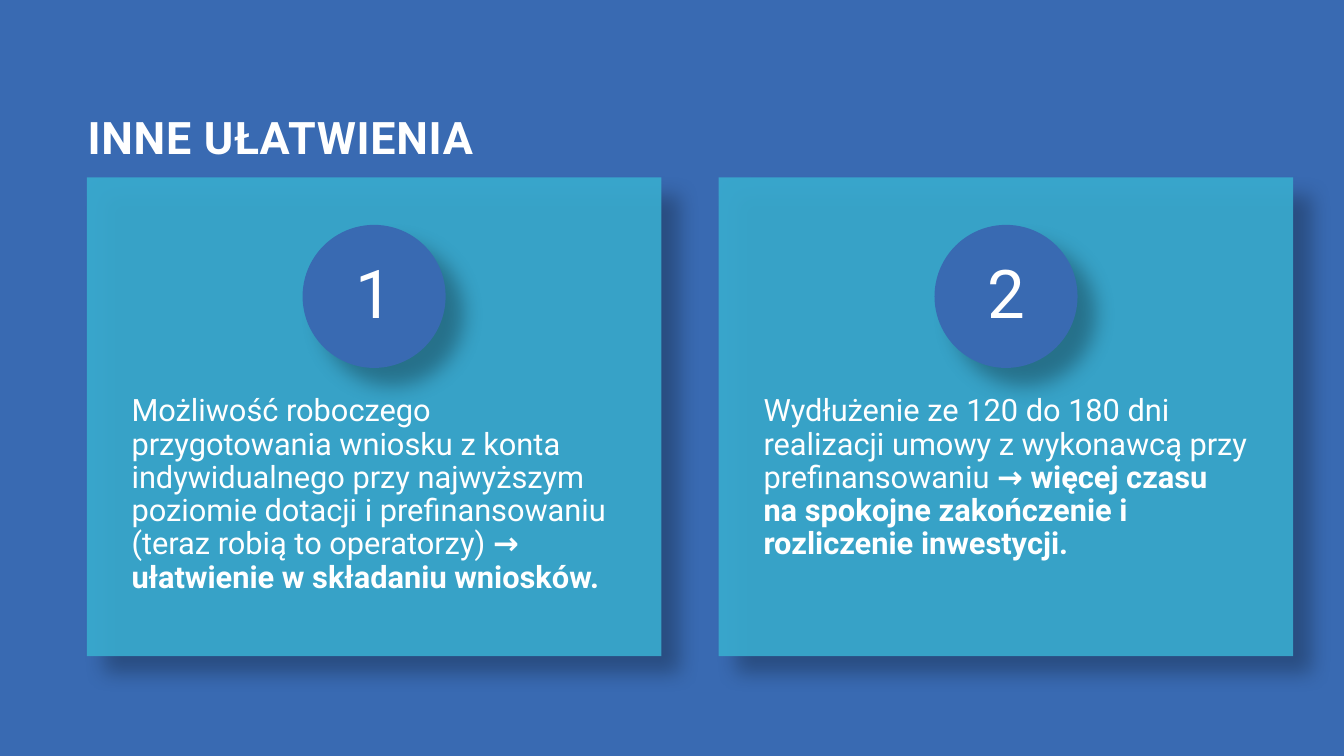
import pptx
import pptx.util
import pptx.dml.color
import pptx.enum.shapes
import pptx.enum.text
import pptx.oxml
import pptx.oxml.ns

Pt = pptx.util.Pt
RGB = pptx.dml.color.RGBColor.from_string
SHAPE = pptx.enum.shapes.MSO_SHAPE
ANCHOR = pptx.enum.text.MSO_ANCHOR
ALIGN = pptx.enum.text.PP_ALIGN
qn = pptx.oxml.ns.qn

COLORS = {"blue": "396AB2", "teal": "39ACCF", "white": "FFFFFF", "shadow": "000000"}
CARDS = [
    ("1", "Możliwość roboczego przygotowania wniosku z konta indywidualnego przy "
          "najwyższym poziomie dotacji i prefinansowaniu (teraz robią to operatorzy) ",
     "→ ułatwienie w składaniu wniosków."),
    ("2", "Wydłużenie ze 120 do 180 dni realizacji umowy z wykonawcą przy "
          "prefinansowaniu ",
     "→ więcej czasu na spokojne zakończenie i rozliczenie inwestycji."),
]
CARD_LEFT, CARD_TOP, CARD_W, CARD_H = 62, 126.7, 410.4, 342
CARD_STEP = 451.4
CIRCLE_TOP, CIRCLE = 160.6, 102.2
TEXT_TOP, TEXT_H = 256.3, 205.2


def add_shadowed(kind, left, top, width, height, color):
    sp = slide.shapes.add_shape(kind, Pt(left), Pt(top), Pt(width), Pt(height))
    sp.fill.solid()
    sp.fill.fore_color.rgb = RGB(COLORS[color])
    sp.line.fill.background()
    sp.shadow.inherit = False
    effects = sp._element.spPr.find(qn("a:effectLst"))
    effects.append(pptx.oxml.parse_xml(
        f'<a:outerShdw {pptx.oxml.ns.nsdecls("a")} blurRad="{Pt(15)}" dist="{Pt(18)}" '
        f'dir="2700000" algn="tl" rotWithShape="0"><a:srgbClr val="{COLORS["shadow"]}">'
        '<a:alpha val="30000"/></a:srgbClr></a:outerShdw>'))
    return sp


def style(p, size):
    p.line_spacing = 0.9
    p.font.name = "Roboto"
    p.font.size = Pt(size)
    p.font.color.rgb = RGB(COLORS["white"])


prs = pptx.Presentation()
prs.slide_width, prs.slide_height = Pt(960), Pt(540)
slide = prs.slides.add_slide(prs.slide_layouts[5])
slide.background.fill.solid()
slide.background.fill.fore_color.rgb = RGB(COLORS["blue"])

# Title
title = slide.shapes.title
title.left, title.top, title.width, title.height = Pt(55.4), Pt(79.2), Pt(339.8), Pt(63.4)
tf = title.text_frame
tf.text = "INNE UŁATWIENIA"
tf.auto_size = pptx.enum.text.MSO_AUTO_SIZE.NONE
tf.vertical_anchor = ANCHOR.TOP
p = tf.paragraphs[0]
p.alignment = ALIGN.LEFT
style(p, 32)
p.font.bold = True
p.runs[0].font._element.set("spc", "50")

for i, (number, text, benefit) in enumerate(CARDS):
    left = CARD_LEFT + i * CARD_STEP

    # Card panel, slightly transparent
    card = add_shadowed(SHAPE.RECTANGLE, left, CARD_TOP, CARD_W, CARD_H, "teal")
    color = card._element.spPr.find(qn("a:solidFill"))[0]
    color.append(pptx.oxml.parse_xml(
        f'<a:alpha {pptx.oxml.ns.nsdecls("a")} val="90000"/>'))

    # Description with the benefit in bold
    box = slide.shapes.add_textbox(Pt(left), Pt(TEXT_TOP), Pt(CARD_W), Pt(TEXT_H))
    tf = box.text_frame
    tf.word_wrap = True
    tf.margin_left = tf.margin_right = Pt(32)
    tf.margin_top = tf.margin_bottom = Pt(26)
    p = tf.paragraphs[0]
    p.add_run().text = text
    r = p.add_run()
    r.text = benefit
    r.font.bold = True
    style(p, 22)

    # Numbered circle
    circle = add_shadowed(SHAPE.OVAL, left + (CARD_W - CIRCLE) / 2, CIRCLE_TOP,
                          CIRCLE, CIRCLE, "blue")
    tf = circle.text_frame
    tf.text = number
    tf.vertical_anchor = ANCHOR.MIDDLE
    tf.margin_left = tf.margin_right = Pt(8)
    tf.margin_top = tf.margin_bottom = Pt(1)
    p = tf.paragraphs[0]
    p.alignment = ALIGN.CENTER
    style(p, 48)

prs.save("out.pptx")
